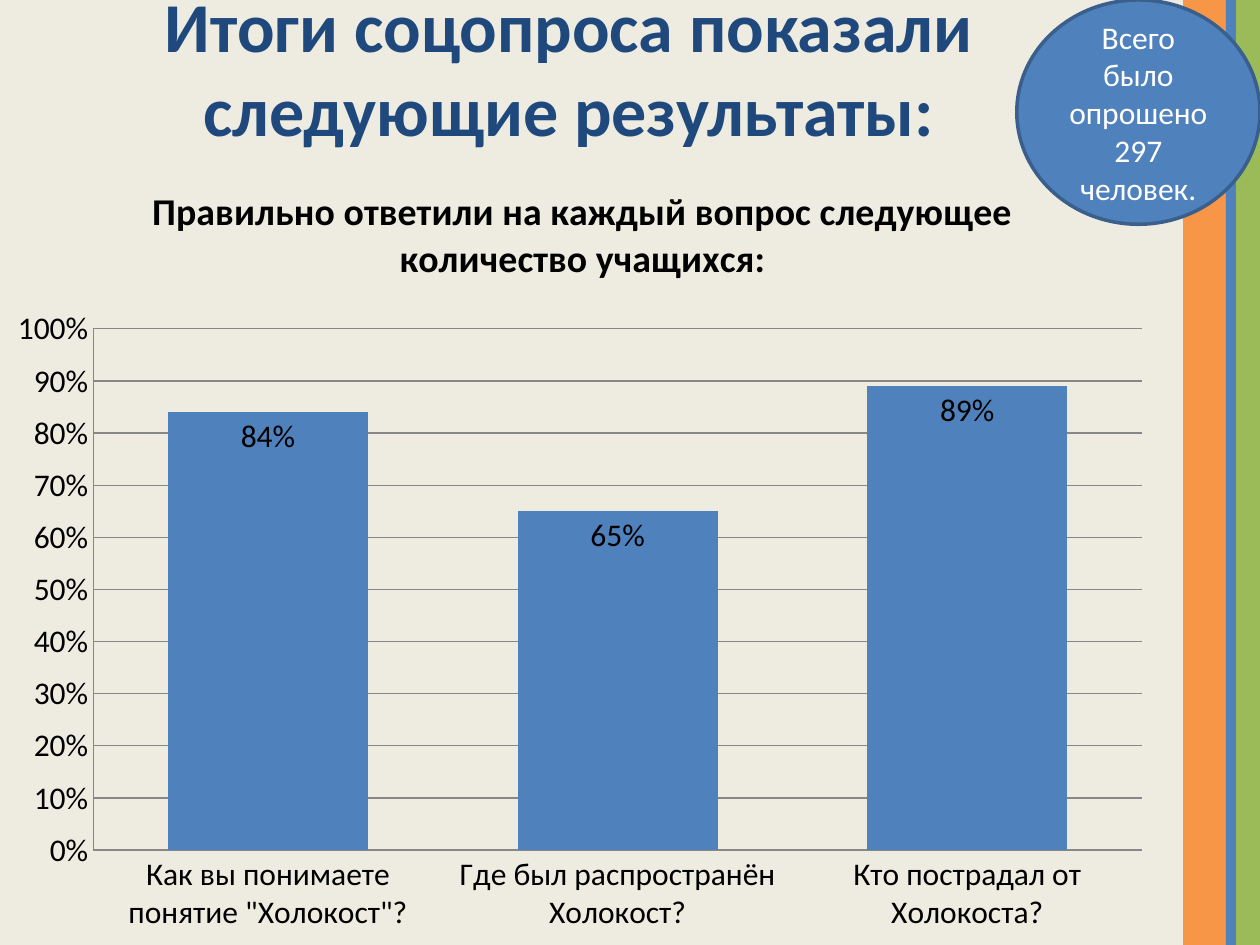
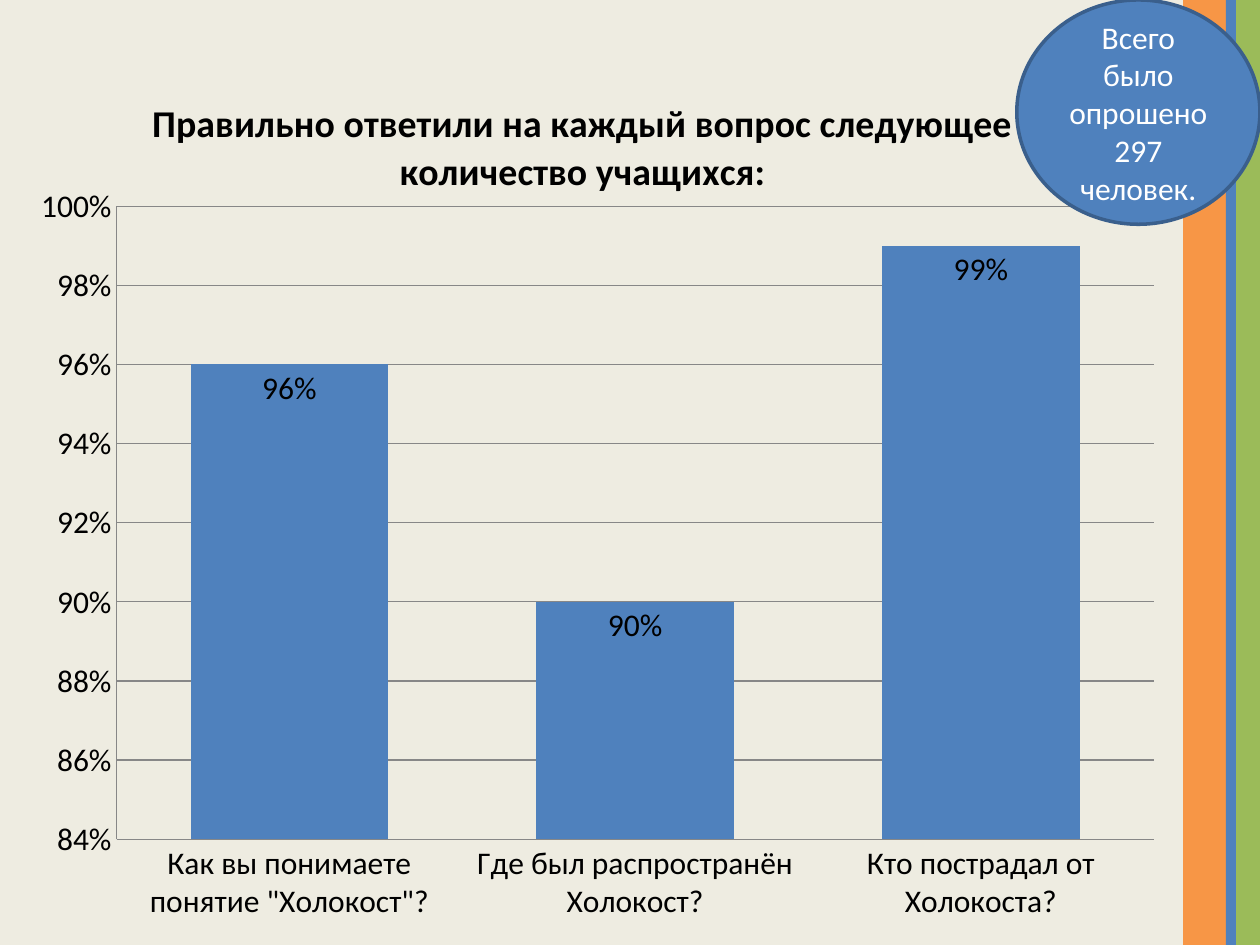
from dataclasses import dataclass

from lxml import etree
from pptx import Presentation
from pptx import util as u
from pptx.chart.data import CategoryChartData
from pptx.dml.color import RGBColor
from pptx.enum import chart as ch
from pptx.enum import shapes, text
from pptx.oxml import ns

SCALE = 9144


@dataclass(frozen=True)
class Theme:
    font: str = "Calibri"
    paper: str = "EEECE1"
    orange: str = "F79646"
    green: str = "9BBB59"
    blue: str = "4F81BD"
    edge: str = "3A5F8C"
    navy: str = "1F497D"
    grid: str = "878787"
    black: str = "000000"
    white: str = "FFFFFF"
    head: float = 40
    sub: float = 21.6
    body: float = 18


def px(n):
    return u.Emu(n * SCALE)


def rgb(code):
    return RGBColor.from_string(code)


class Deck:
    """Holds the theme, the presentation and the current slide."""

    def __init__(self, theme):
        self.theme = theme
        self.prs = Presentation()
        self.prs.slide_width, self.prs.slide_height = px(1000), px(750)
        self.slide = None
        fill = self.prs.slide_master.background.fill
        fill.solid()
        fill.fore_color.rgb = rgb(theme.paper)

    def page(self, layout):
        self.slide = self.prs.slides.add_slide(self.prs.slide_layouts[layout])

    def run(self, para, words, size, color, bold=False):
        para.alignment = text.PP_ALIGN.CENTER
        run = para.add_run()
        run.text = words
        self.style(run.font, size, color, bold)

    def style(self, font, size, color, bold=False):
        font.name, font.size, font.bold = self.theme.font, u.Pt(size), bold
        font.color.rgb = rgb(color)

    def shape(self, kind, box, fill, edge=None):
        shape = self.slide.shapes.add_shape(kind, *map(px, box))
        shape.shadow.inherit = False
        shape.fill.solid()
        shape.fill.fore_color.rgb = rgb(fill)
        if edge:
            shape.line.color.rgb = rgb(edge)
            shape.line.width = u.Pt(2)
        else:
            shape.line.fill.background()
        return shape

    def band(self, left, width, color, num):
        bar = self.shape(shapes.MSO_SHAPE.RECTANGLE, (left, 0, width, 750), color)
        node = bar._element
        node.nvSpPr.cNvPr.set("id", str(num))
        self.prs.slide_master.shapes._spTree.append(node)

    def title(self, words, box):
        title = self.slide.shapes.title
        title.left, title.top, title.width, title.height = map(px, box)
        frame = title.text_frame
        frame.word_wrap = True
        frame.auto_size = text.MSO_AUTO_SIZE.NONE
        frame.vertical_anchor = text.MSO_ANCHOR.TOP
        para = frame.paragraphs[0]
        self.run(para, words, self.theme.head, self.theme.navy, True)

    def badge(self, words, box):
        oval = self.shape(shapes.MSO_SHAPE.OVAL, box, self.theme.blue, self.theme.edge)
        frame = oval.text_frame
        frame.word_wrap = True
        frame.vertical_anchor = text.MSO_ANCHOR.MIDDLE
        self.run(frame.paragraphs[0], words, self.theme.body, self.theme.white)

    def chart(self, name, cats, vals, box, plot, low, step):
        data = CategoryChartData(number_format="0%")
        data.categories = cats
        data.add_series(name, vals)
        kind = ch.XL_CHART_TYPE.COLUMN_CLUSTERED
        chart = self.slide.shapes.add_chart(kind, *map(px, box), data).chart
        self.style(chart.font, self.theme.body, self.theme.black)
        chart.has_legend = False
        chart.has_title = True
        para = chart.chart_title.text_frame.paragraphs[0]
        self.run(para, name, self.theme.sub, self.theme.black, True)
        chart.chart_title.include_in_layout = False
        self.bars(chart.plots[0])
        self.axes(chart, low, step)
        self.place(chart, plot)

    def bars(self, plot):
        plot.gap_width, plot.overlap = 75, 40
        plot.vary_by_categories = False
        fill = plot.series[0].format.fill
        fill.solid()
        fill.fore_color.rgb = rgb(self.theme.blue)
        plot.has_data_labels = True
        tags = plot.data_labels
        tags.show_value = True
        tags.position = ch.XL_LABEL_POSITION.INSIDE_END
        tags.number_format, tags.number_format_is_linked = "0%", False

    def axes(self, chart, low, step):
        side = chart.value_axis
        side.minimum_scale, side.maximum_scale, side.major_unit = low, 1, step
        side.has_major_gridlines = True
        side.tick_labels.number_format = "0%"
        side.tick_labels.number_format_is_linked = False
        for axis in (side, chart.category_axis):
            axis.major_tick_mark = axis.minor_tick_mark = ch.XL_TICK_MARK.NONE
        for part in (side, side.major_gridlines, chart.category_axis):
            part.format.line.color.rgb = rgb(self.theme.grid)
            part.format.line.width = u.Pt(0.75)

    def place(self, chart, plot):
        area = chart._chartSpace.chart.plotArea
        for old in area.findall(ns.qn("c:layout")):
            area.remove(old)
        layout = etree.Element(ns.qn("c:layout"))
        area.insert(0, layout)
        manual = etree.SubElement(layout, ns.qn("c:manualLayout"))
        modes = ("inner", "edge", "edge")
        tags = ("layoutTarget", "xMode", "yMode", "x", "y", "w", "h")
        for tag, val in zip(tags, (*modes, *plot)):
            etree.SubElement(manual, ns.qn(f"c:{tag}")).set("val", str(val))


def main():
    theme = Theme()
    deck = Deck(theme)
    name = "Правильно ответили на каждый вопрос следующее количество учащихся:"
    cats = (
        'Как вы понимаете понятие "Холокост"?',
        "Где был распространён Холокост?",
        "Кто пострадал от Холокоста?",
    )
    note = "Всего было опрошено 297 человек."
    oval = (807, 0, 193, 178)

    deck.page(5)
    bands = ((939, 35, theme.orange), (981, 19, theme.green), (973, 8, theme.blue))
    for num, band in enumerate(bands, 20):
        deck.band(*band, num)
    deck.title("Итоги соцопроса показали следующие результаты:", (43, -19, 817, 115))
    deck.chart(name, cats, (0.84, 0.65, 0.89), (0, 123, 925, 627),
               (0.08, 0.22, 0.9, 0.66), 0, 0.1)
    deck.badge(note, oval)

    deck.page(6)
    deck.chart(name, cats, (0.96, 0.9, 0.99), (0, 52, 925, 698),
               (0.1, 0.16, 0.89, 0.72), 0.84, 0.02)
    deck.badge(note, oval)
    deck.prs.save("out.pptx")


if __name__ == "__main__":
    main()
